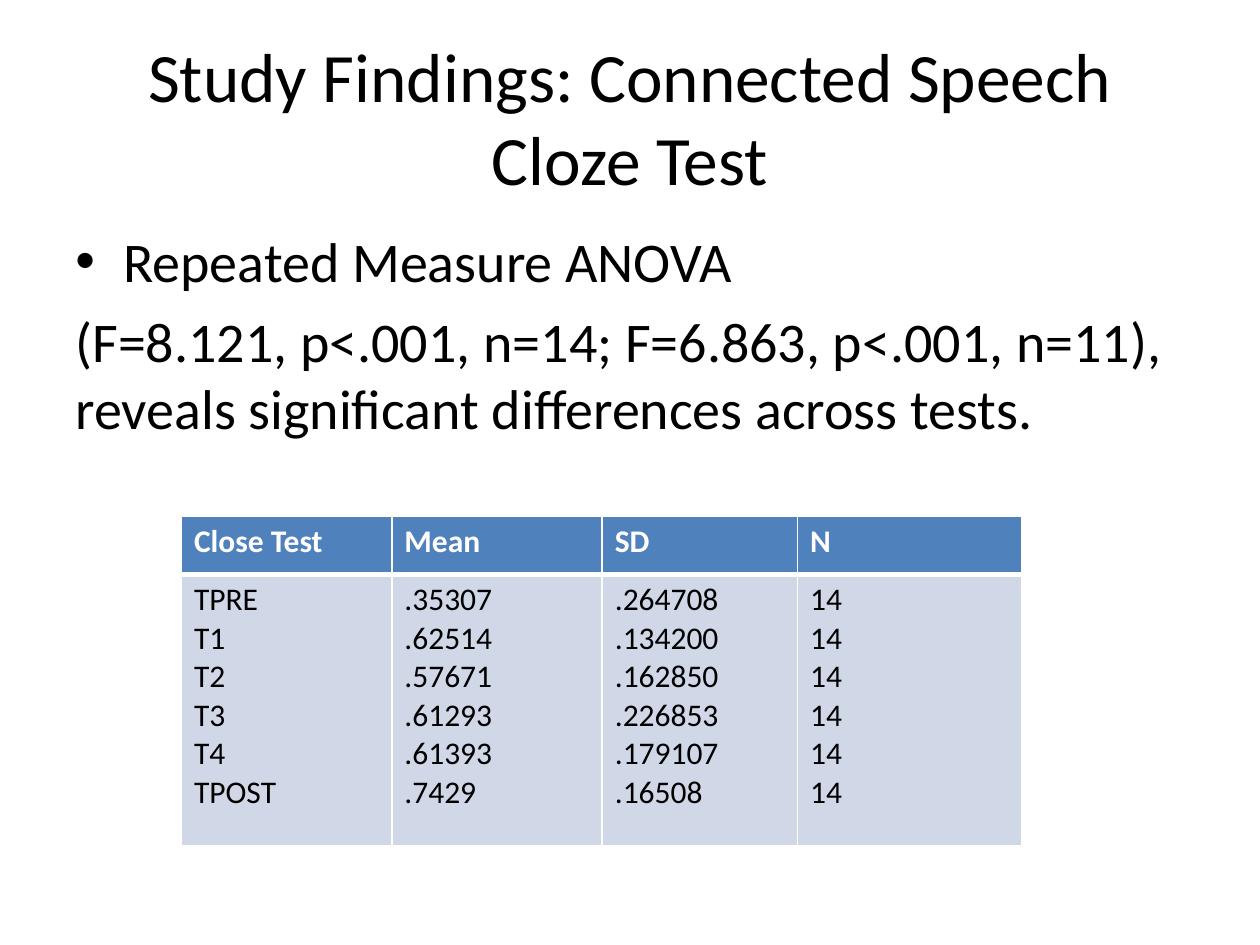
from lxml import etree
from pptx import Presentation
from pptx import util as u
from pptx.dml.color import RGBColor
from pptx.enum import text
from pptx.oxml.ns import qn


def style(p, size, color, bold=False):
    for r in p.runs:
        r.font.name = "Calibri"
        r.font.size = u.Pt(size)
        r.font.bold = bold
        r.font.color.rgb = RGBColor.from_string(color)


def border(cell, side, width):
    ln = etree.SubElement(cell._tc.get_or_add_tcPr(), qn("a:ln" + side), w=str(u.Pt(width)))
    fill = etree.SubElement(ln, qn("a:solidFill"))
    etree.SubElement(fill, qn("a:srgbClr"), val="FFFFFF")


prs = Presentation()
prs.slide_width, prs.slide_height = u.Inches(10), u.Inches(7.5)
s = prs.slides.add_slide(prs.slide_layouts[5])

title = s.shapes.title
title.left, title.top = u.Inches(0.5), u.Inches(0.3)
title.width, title.height = u.Inches(9), u.Inches(1.25)
tf = title.text_frame
tf.text = "Study Findings: Connected Speech Cloze Test"
tf.vertical_anchor = text.MSO_ANCHOR.MIDDLE
tf.paragraphs[0].alignment = text.PP_ALIGN.CENTER
style(tf.paragraphs[0], 39.6, "000000")

body = s.shapes.add_textbox(u.Inches(0.5), u.Inches(1.75), u.Inches(9), u.Inches(4.95))
tf = body.text_frame
tf.word_wrap = True
tf.text = ("Repeated Measure ANOVA\n"
           "(F=8.121, p<.001, n=14; F=6.863, p<.001, n=11), "
           "reveals significant differences across tests.")
for p in tf.paragraphs:
    p.space_before = u.Pt(7)
    style(p, 32, "000000")
pPr = tf.paragraphs[0]._p.get_or_add_pPr()
pPr.set("marL", str(u.Inches(0.38)))
pPr.set("indent", str(u.Inches(-0.38)))
etree.SubElement(pPr, qn("a:buFont"), typeface="Arial")
etree.SubElement(pPr, qn("a:buChar"), char="•")

columns = [
    ("Close Test", 1.67, ["TPRE", "T1", "T2", "T3", "T4", "TPOST"]),
    ("Mean", 1.67, [".35307", ".62514", ".57671", ".61293", ".61393", ".7429"]),
    ("SD", 1.55, [".264708", ".134200", ".162850", ".226853", ".179107", ".16508"]),
    ("N", 1.78, ["14"] * 6),
]
table = s.shapes.add_table(2, len(columns), u.Inches(1.44), u.Inches(4.1),
                           u.Inches(6.67), u.Inches(2.6)).table
table.rows[0].height, table.rows[1].height = u.Inches(0.46), u.Inches(2.15)
for c, (heading, width, values) in enumerate(columns):
    table.columns[c].width = u.Inches(width)
    rows = [(heading, "4F81BD", "FFFFFF", True, (1, 1, 1, 3)),
            ("\n".join(values), "D0D8E8", "000000", False, (1, 1, 3, 1))]
    for r, (content, fill, color, bold, widths) in enumerate(rows):
        cell = table.cell(r, c)
        cell.text_frame.text = content
        for side, line in zip("LRTB", widths):
            border(cell, side, line)
        cell.fill.solid()
        cell.fill.fore_color.rgb = RGBColor.from_string(fill)
        for p in cell.text_frame.paragraphs:
            style(p, 18, color, bold)

prs.save("out.pptx")
